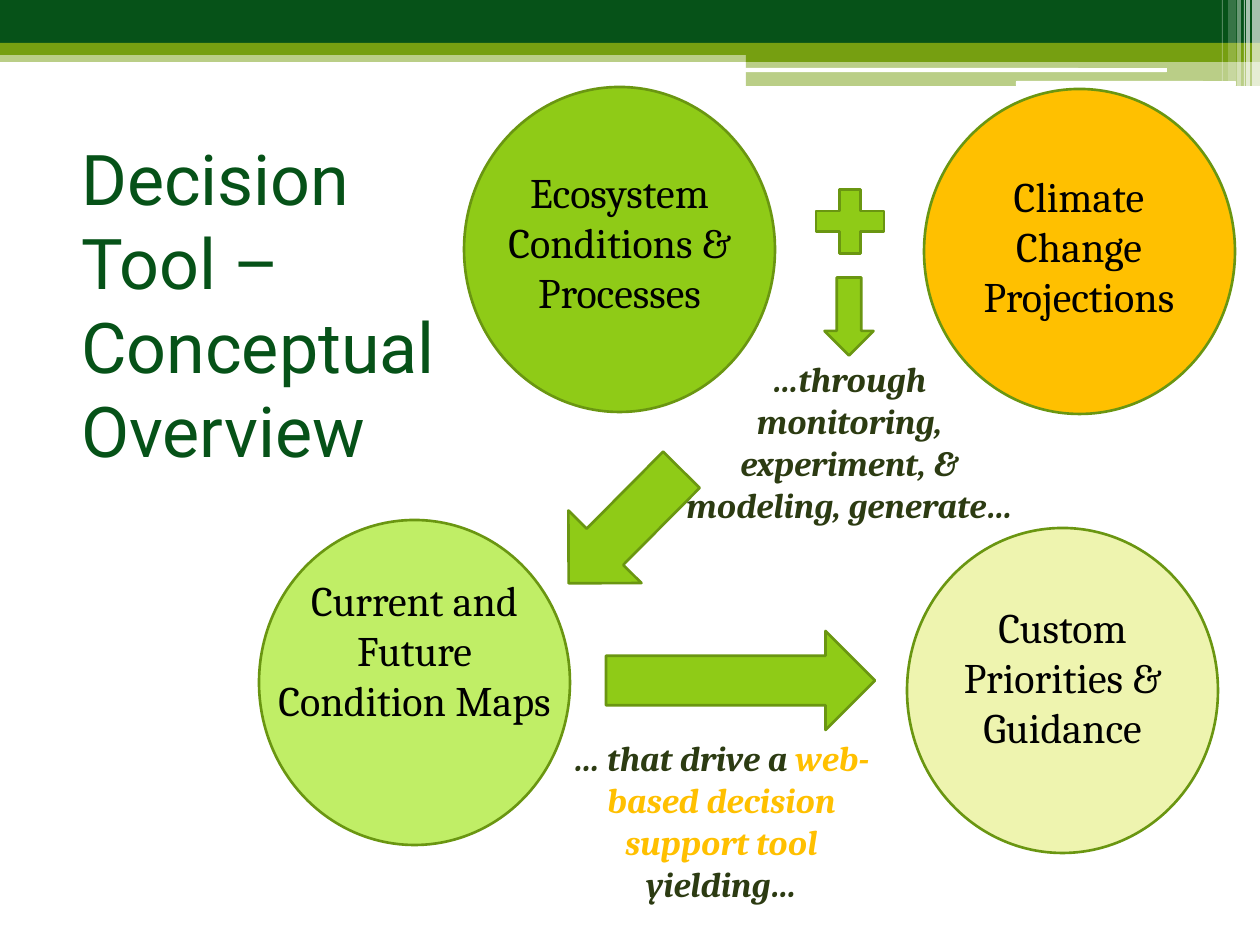
from lxml import etree
from pptx import Presentation
from pptx import util as u
from pptx.dml.color import RGBColor
from pptx.enum import shapes, text
from pptx.oxml.ns import qn

SCALE = 914400 / 126
SHAPE = shapes.MSO_SHAPE
DARK, OLIVE, WHITE = "065218", "769F11", "FFFFFF"
LIME, EDGE, AMBER, INK = "8FCB17", "6A9611", "FFC000", "2C3B12"


def px(n):
    """Turn px into EMU."""
    return u.Emu(round(n * SCALE))


def rgb(value):
    """Turn a hex string into a colour."""
    return RGBColor.from_string(value)


def add_shape(parent, kind, box, fill, line=None, alpha=None, rotation=0):
    """Add a filled preset shape, with optional outline and opacity."""
    sp = parent.shapes.add_shape(kind, *map(px, box))
    sp.shadow.inherit = False
    sp.rotation = rotation
    sp.fill.solid()
    sp.fill.fore_color.rgb = rgb(fill)
    if alpha is not None:
        color = sp.fill._xPr.find(qn("a:solidFill"))[0]
        etree.SubElement(color, qn("a:alpha"), val=str(alpha * 1000))
    if line:
        sp.line.color.rgb = rgb(line)
        sp.line.width = u.Pt(1.5)
    else:
        sp.line.fill.background()
    return sp


def add_text(parent, box, runs, size=24, font="Cambria", color="000000", emphasis=None,
             align=text.PP_ALIGN.CENTER, anchor=text.MSO_ANCHOR.TOP):
    """Add a wrapped text box from a string or from (string, colour) runs."""
    tf = parent.shapes.add_textbox(*map(px, box)).text_frame
    tf.word_wrap = True
    tf.vertical_anchor = anchor
    p = tf.paragraphs[0]
    p.alignment = align
    for content, run_color in [(runs, color)] if isinstance(runs, str) else runs:
        r = p.add_run()
        r.text = content
        r.font.size = u.Pt(size)
        r.font.name = font
        r.font.bold = r.font.italic = emphasis
        r.font.color.rgb = rgb(run_color)


def add_banner(s, x, y, width):
    """Draw the layered green banner with its white rules and stripes."""
    step = 746
    bands = [(0, 50, width, 12, OLIVE, 50), (0, 0, width, 43, DARK, None),
             (0, 43, width, 12, OLIVE, None), (step, 49, width - step, 13, OLIVE, None),
             (step, 61, width - step, 25, OLIVE, 50)]
    stripes = [(8, 8, 86, 65), (14, 4, 86, 65), (16, 1, 86, 60),
               (23, 4, 86, 40), (32, 8, 81, 20), (38, 1, 81, 30)]
    for left, top, w, h, fill, alpha in bands:
        add_shape(s, SHAPE.RECTANGLE, (x + left, y + top, w, h), fill, alpha=alpha)
    for left, top, w, h in [(745, 68, 422, 4), (1016, 81, 220, 5)]:
        add_shape(s, SHAPE.ROUNDED_RECTANGLE, (x + left, y + top, w, h), WHITE)
    for from_right, w, h, alpha in stripes:
        add_shape(s, SHAPE.RECTANGLE, (x + width - from_right, y, w, h), WHITE, alpha=alpha)


def add_circle(s, x, y, fill, label, label_top, label_width=309):
    """Draw a grouped circle with its label centred across it."""
    width, height = 311, 325
    group = s.shapes.add_group_shape()
    add_shape(group, SHAPE.OVAL, (x, y, width, height), fill, EDGE)
    label_left = x + (width - label_width) // 2
    add_text(group, (label_left, y + label_top, label_width, 165), label)


def add_flow(s, x, y):
    """Draw the plus sign, the arrows and the captions that link the circles."""
    symbols = [(SHAPE.MATH_PLUS, 263, -1, 92, 87, 0),
               (SHAPE.RIGHT_ARROW, 4, 296, 160, 103, 134.8),
               (SHAPE.RIGHT_ARROW, 65, 452, 269, 99, 0),
               (SHAPE.RIGHT_ARROW, 269, 113, 78, 49, 90)]
    for kind, left, top, w, h, rotation in symbols:
        add_shape(s, kind, (x + left, y + top, w, h), LIME, EDGE, rotation=rotation)
    captions = [((x + 128, y + 172, 361, 224),
                 [("…through monitoring, experiment, & modeling, generate…", INK)]),
                ((x - 3, y + 551, 367, 183),
                 [("… that drive a ", INK), ("web-based decision support tool", AMBER),
                  (" yielding…", INK)])]
    for box, runs in captions:
        add_text(s, box, runs, size=20, emphasis=True)


def main():
    """Build the slide and save it."""
    prs = Presentation()
    prs.slide_width, prs.slide_height = px(1260), px(945)
    s = prs.slides.add_slide(prs.slide_layouts[6])
    add_banner(s, 0, 0, 1260)
    add_text(s, (69, 90, 389, 428), "Decision Tool – Conceptual Overview", size=40,
             font="Roboto", color=DARK, align=text.PP_ALIGN.LEFT,
             anchor=text.MSO_ANCHOR.MIDDLE)
    add_circle(s, 924, 89, AMBER, "Climate Change Projections", 75, 266)
    add_circle(s, 464, 87, LIME, "Ecosystem Conditions & Processes", 73)
    add_circle(s, 259, 520, "C0EE66", "Current and Future Condition Maps", 48)
    add_circle(s, 907, 528, "EEF4AF", "Custom Priorities & Guidance", 67)
    add_flow(s, 541, 179)
    prs.save("out.pptx")


if __name__ == "__main__":
    main()
